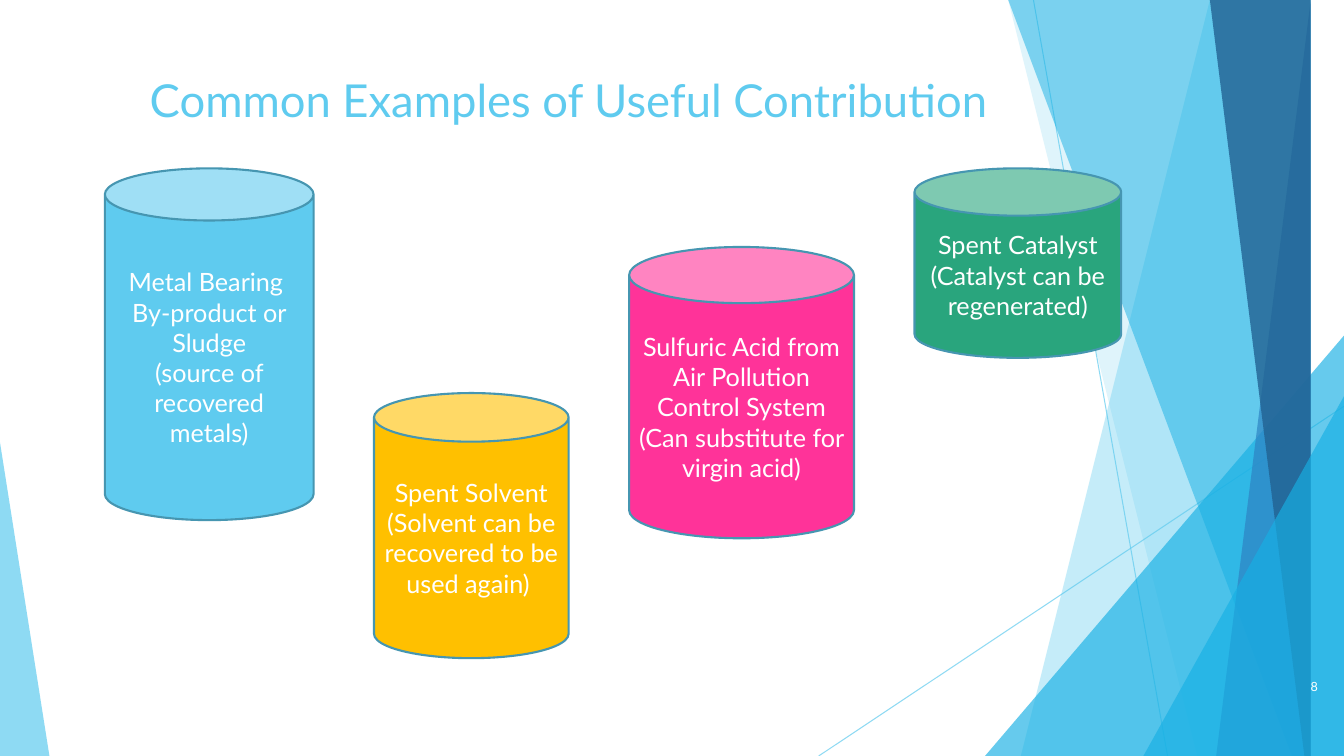
from lxml import etree
from pptx import Presentation
from pptx import util as u
from pptx.dml.color import RGBColor
from pptx.enum import shapes, text
from pptx.oxml import ns

WHITE = RGBColor(0xFF, 0xFF, 0xFF)
SKY = RGBColor(0x5F, 0xCB, 0xEF)
CYAN = RGBColor(0x17, 0xB0, 0xE4)
BLUE = RGBColor(0x2E, 0x83, 0xC3)
NAVY = RGBColor(0x22, 0x62, 0x92)
GREEN = RGBColor(0x29, 0xA5, 0x7D)
AMBER = RGBColor(0xFF, 0xC0, 0x00)
PINK = RGBColor(0xFF, 0x33, 0x99)
OUTLINE = RGBColor(0x46, 0x96, 0xB1)

FONT = "Lato"
WIDTH, HEIGHT = 13.33, 7.5
TOP = -0.01

RAYS = [((10.25, 0), (11.58, HEIGHT)), ((WIDTH, 4.03), (8.12, HEIGHT))]

BANDS_BEHIND = [(12.28, 10.04, SKY, 36), (10.5, 11.83, SKY, 20)]
BANDS_FRONT = [
    (10.21, 12.91, CYAN, 50),
    (13.03, 11.92, BLUE, 70),
    (11.96, 13.18, NAVY, 80),
]

DRUMS = [
    ((1.04, 1.67, 2.07, 3.49), SKY,
     ["Metal Bearing ", "By-product or Sludge", "(source of recovered metals)"]),
    ((9.07, 1.67, 2.05, 1.88), GREEN,
     ["Spent Catalyst", "(Catalyst can be regenerated)"]),
    ((3.71, 3.9, 1.93, 2.63), AMBER,
     ["Spent Solvent", "(Solvent can be recovered to be used again) "]),
    ((6.24, 2.45, 2.23, 2.89), PINK,
     ["Sulfuric Acid from Air Pollution Control System",
      "(Can substitute for virgin acid)"]),
]


def inches(values):
    return [u.Inches(value) for value in values]


def set_alpha(color_format, percent):
    color = color_format._xFill.find(ns.qn("a:srgbClr"))
    etree.SubElement(color, ns.qn("a:alpha"), val=str(percent * 1000))


def paint(shape, color, alpha):
    shape.shadow.inherit = False
    shape.fill.solid()
    shape.fill.fore_color.rgb = color
    set_alpha(shape.fill.fore_color, alpha)
    shape.line.fill.background()


def add_ray(page, start, end):
    ray = page.shapes.add_connector(
        shapes.MSO_CONNECTOR.STRAIGHT, *inches(start + end))
    ray.line.width = u.Pt(0.75)
    ray.line.color.rgb = SKY
    set_alpha(ray.line.fill.fore_color, 70)
    etree.SubElement(ray._element.spPr, ns.qn("a:effectLst"))


def add_band(page, top_x, bottom_x, color, alpha):
    builder = page.shapes.build_freeform(top_x, TOP, scale=u.Inches(1))
    builder.add_line_segments(
        [(WIDTH, TOP), (WIDTH, HEIGHT), (bottom_x, HEIGHT)], close=True)
    paint(builder.convert_to_shape(), color, alpha)


def add_wedge(page, box, apex, color, alpha):
    wedge = page.shapes.add_shape(
        shapes.MSO_SHAPE.ISOSCELES_TRIANGLE, *inches(box))
    wedge.adjustments[0] = apex
    paint(wedge, color, alpha)


def write(shape, lines, size, color, align, anchor):
    frame = shape.text_frame
    frame.word_wrap = True
    frame.vertical_anchor = anchor
    font_format = {"name": FONT, "size": u.Pt(size)}
    for index, line in enumerate(lines):
        para = frame.add_paragraph() if index else frame.paragraphs[0]
        para.alignment = align
        span = para.add_run()
        span.text = line
        span.font.color.rgb = color
        for name, value in font_format.items():
            setattr(span.font, name, value)


def add_label(page, box, line, size, color, align, anchor):
    label = page.shapes.add_textbox(*inches(box))
    write(label, [line], size, color, align, anchor)


def add_drum(page, box, color, lines):
    drum = page.shapes.add_shape(shapes.MSO_SHAPE.CAN, *inches(box))
    drum.shadow.inherit = False
    drum.fill.solid()
    drum.fill.fore_color.rgb = color
    drum.line.color.rgb = OUTLINE
    drum.line.width = u.Pt(1.5)
    write(drum, lines, 18, WHITE, text.PP_ALIGN.CENTER, text.MSO_ANCHOR.MIDDLE)


def add_backdrop(page):
    for start, end in RAYS:
        add_ray(page, start, end)
    for band in BANDS_BEHIND:
        add_band(page, *band)
    add_wedge(page, (9.77, 3.33, 3.56, 4.17), 1, CYAN, 66)
    for band in BANDS_FRONT:
        add_band(page, *band)
    add_wedge(page, (11.34, 3.93, 1.99, 3.57), 1, CYAN, 66)
    add_wedge(page, (0, 4.39, 0.49, 3.11), 0, SKY, 70)


def main():
    deck = Presentation()
    deck.slide_width, deck.slide_height = inches((WIDTH, HEIGHT))
    page = deck.slides.add_slide(deck.slide_layouts[6])
    add_backdrop(page)
    add_label(page, (0.94, 0.67, 9.4, 0.83),
              "Common Examples of Useful Contribution", 32.4, SKY,
              text.PP_ALIGN.CENTER, text.MSO_ANCHOR.TOP)
    for drum in DRUMS:
        add_drum(page, *drum)
    add_label(page, (12.42, 6.61, 0.75, 0.4), "8", 9, WHITE,
              text.PP_ALIGN.RIGHT, text.MSO_ANCHOR.MIDDLE)
    deck.save("out.pptx")


if __name__ == "__main__":
    main()
